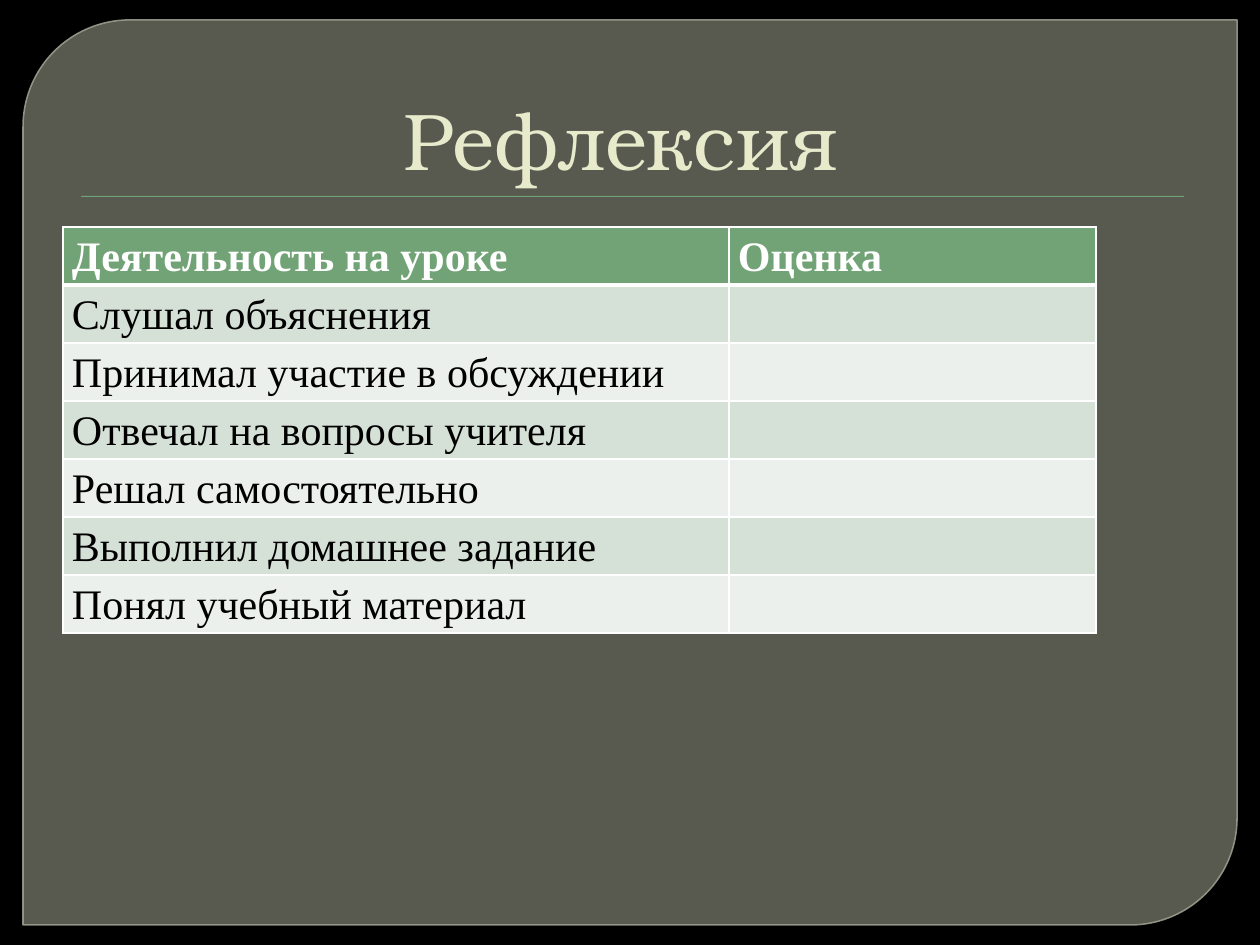
"""Build the lesson reflection slide with its self-assessment table."""
from lxml import etree
from pptx import Presentation
from pptx.dml.color import RGBColor
from pptx.enum.shapes import MSO_SHAPE
from pptx.enum.text import MSO_ANCHOR, PP_ALIGN
from pptx.oxml.ns import qn
from pptx.util import Pt

PX = 914400 / 126
PANEL_SHAPE = MSO_SHAPE.ROUND_2_DIAG_RECTANGLE
RULE_SHAPE = MSO_SHAPE.RECTANGLE
BOTTOM = MSO_ANCHOR.BOTTOM
CENTER = PP_ALIGN.CENTER
WHITE = "FFFFFF"


def px(*lengths):
    return [round(length * PX) for length in lengths]


def paint(color_format, color, opacity=100):
    color_format.rgb = RGBColor.from_string(color)
    if opacity < 100:
        for node in color_format._xFill.iter(qn("a:srgbClr")):
            etree.SubElement(node, qn("a:alpha"), val=str(opacity * 1000))


prs = Presentation()
prs.slide_width, prs.slide_height = px(1260, 945)
slide = prs.slides.add_slide(prs.slide_layouts[6])
slide.background.fill.solid()
paint(slide.background.fill.fore_color, "000000")

panel = slide.shapes.add_shape(PANEL_SHAPE, *px(23, 20, 1214, 905))
panel.adjustments[0] = 0.118
panel.adjustments[1] = 0
rule = slide.shapes.add_shape(RULE_SHAPE, *px(81, 196, 1103, 1))
for backdrop, color, opacity in [(panel, "888B7B", 65), (rule, "72A376", 100)]:
    backdrop.shadow.inherit = False
    backdrop.fill.solid()
    paint(backdrop.fill.fore_color, color)
    for node in backdrop.fill._xPr.iter(qn("a:srgbClr")):
        etree.SubElement(node, qn("a:alpha"), val=str(opacity * 1000))
rule.line.fill.background()
panel.line.width = Pt(0.87)
paint(panel.line.color, "9DA090", 88)

heading = slide.shapes.add_textbox(*px(63, 35, 1134, 158)).text_frame
heading.word_wrap = True
heading.vertical_anchor = BOTTOM
title = heading.paragraphs[0]
title.alignment = CENTER
title._p.get_or_add_pPr().set("marL", str(px(7)[0]))
title_run = title.add_run()
title_run.text = "Рефлексия "
for attribute, value in {"size": Pt(46), "name": "TeX Gyre Bonum"}.items():
    setattr(title_run.font, attribute, value)
paint(title_run.font.color, "E7EACB")

rows = [
    ("Деятельность на уроке", "Оценка"),
    ("Слушал объяснения", ""),
    ("Принимал участие в обсуждении", ""),
    ("Отвечал на вопросы учителя", ""),
    ("Решал самостоятельно", ""),
    ("Выполнил домашнее задание", ""),
    ("Понял учебный материал", ""),
]
side, = px(9)
cell_format = {"margin_left": side, "margin_right": side, "margin_top": 0, "margin_bottom": 0}
assessment = slide.shapes.add_table(len(rows), 2, *px(63, 227, 1033, 52 * len(rows))).table
for column, width in zip(assessment.columns, px(666, 367)):
    column.width = width

for row_index, texts in enumerate(rows):
    is_header = row_index == 0
    row_fill = "72A376" if is_header else ("EBF0EC", "D5E0D6")[row_index % 2]
    text_format = {"size": Pt(24), "name": "Times New Roman", "bold": is_header}
    edges = {
        "a:lnL": 1,
        "a:lnR": 1,
        "a:lnT": 3 if row_index == 1 else 1,
        "a:lnB": 3 if is_header else 1,
    }
    for column_index, text in enumerate(texts):
        cell = assessment.cell(row_index, column_index)
        for attribute, value in cell_format.items():
            setattr(cell, attribute, value)
        properties = cell._tc.get_or_add_tcPr()
        for edge, points in edges.items():
            border = etree.SubElement(properties, qn(edge), w=str(Pt(points)))
            border_fill = etree.SubElement(border, qn("a:solidFill"))
            etree.SubElement(border_fill, qn("a:srgbClr"), val=WHITE)
        cell.fill.solid()
        paint(cell.fill.fore_color, row_fill)
        if text:
            entry = cell.text_frame.paragraphs[0]
            entry.line_spacing = 1.15
            entry_run = entry.add_run()
            entry_run.text = text
            for attribute, value in text_format.items():
                setattr(entry_run.font, attribute, value)
            paint(entry_run.font.color, WHITE if is_header else "000000")

prs.save("out.pptx")
